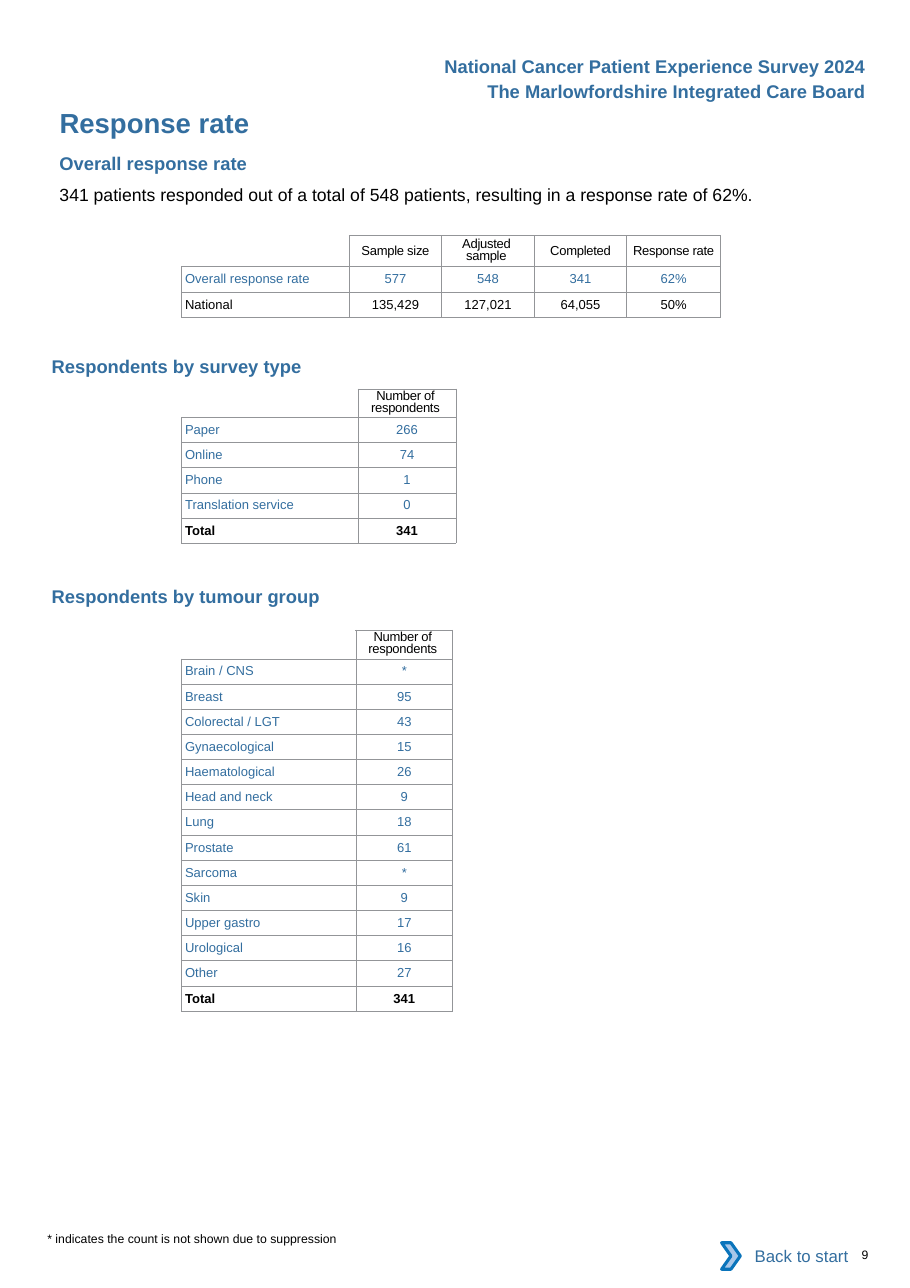
from lxml.etree import SubElement
from pptx import Presentation
from pptx.dml.color import RGBColor
from pptx.enum.shapes import MSO_SHAPE
from pptx.enum.text import MSO_ANCHOR, MSO_AUTO_SIZE, PP_ALIGN
from pptx.oxml.ns import qn
from pptx.util import Pt

PX = 9144  # 100 px to the inch
BLUE = RGBColor(0x33, 0x6E, 0x9F)
BLACK = RGBColor(0, 0, 0)
WHITE = RGBColor(255, 255, 255)
SKY = RGBColor(0xA8, 0xC7, 0xE9)
EDGE = RGBColor(0x0A, 0x74, 0xBB)
GREY = "939598"
LEFT, MID, RIGHT = PP_ALIGN.LEFT, PP_ALIGN.CENTER, PP_ALIGN.RIGHT

TITLE = ("Response rate", (54, 96, 413, 30), 18, BLUE, True, LEFT)

# text, box, size, colour, bold, alignment
TEXTS = [
    ("National Cancer Patient Experience Survey 2024", (386, 50, 400, 20), 12, BLUE, True, RIGHT),
    ("The Marlowfordshire Integrated Care Board", (386, 73, 400, 20), 12, BLUE, True, RIGHT),
    ("Overall response rate", (54, 138, 413, 20), 12, BLUE, True, LEFT),
    ("341 patients responded out of a total of 548 patients, "
     "resulting in a response rate of 62%.", (54, 167, 720, 19), 11.5, BLACK, False, LEFT),
    ("Respondents by survey type", (47, 322, 300, 20), 12, BLUE, True, LEFT),
    ("Respondents by tumour group", (47, 531, 300, 20), 12, BLUE, True, LEFT),
    ("* indicates the count is not shown due to suppression",
     (43, 1118, 300, 13), 8, BLACK, False, LEFT),
    ("9", (782, 1132, 30, 13), 8, BLACK, False, LEFT),
]

# top, height, head height, column widths, rows
TABLES = [
    (214, 74, 28, (152, 84, 84, 84, 85), [
        ("", "Sample size", "Adjusted sample", "Completed", "Response rate"),
        ("Overall response rate", "577", "548", "341", "62%"),
        ("National", "135,429", "127,021", "64,055", "50%"),
    ]),
    (353, 140, 26, (160, 89), [
        ("", "Number of respondents"),
        ("Paper", "266"),
        ("Online", "74"),
        ("Phone", "1"),
        ("Translation service", "0"),
        ("Total", "341"),
    ]),
    (572, 346, 26, (158, 88), [
        ("", "Number of respondents"),
        ("Brain / CNS", "*"),
        ("Breast", "95"),
        ("Colorectal / LGT", "43"),
        ("Gynaecological", "15"),
        ("Haematological", "26"),
        ("Head and neck", "9"),
        ("Lung", "18"),
        ("Prostate", "61"),
        ("Sarcoma", "*"),
        ("Skin", "9"),
        ("Upper gastro", "17"),
        ("Urological", "16"),
        ("Other", "27"),
        ("Total", "341"),
    ]),
]
TABLE_LEFT = 165
WRAP_LEN = 14  # longer heads run over two tight lines

LINK = ("Back to start", (662, 1119, 118, 42))
ARROW = (655, 1128, 17, 24)


def scale(box):
    return [n * PX for n in box]


def style(par, size, color, bold=False, align=LEFT):
    par.alignment = align
    for run in par.runs:
        font = run.font
        font.name, font.size, font.bold = "Arial", Pt(size), bold
        font.color.rgb = color


def write(shape, text, size, color, bold, align):
    """Fill a text shape that has no inner margins."""
    frame = shape.text_frame
    frame.margin_left = frame.margin_right = 0
    frame.margin_top = frame.margin_bottom = 0
    frame.word_wrap = True
    frame.auto_size = MSO_AUTO_SIZE.NONE
    frame.vertical_anchor = MSO_ANCHOR.TOP
    frame.text = text
    style(frame.paragraphs[0], size, color, bold, align)


def border(cell, corner):
    """Rule all four sides; a corner cell has only its right and bottom."""
    props = cell._tc.get_or_add_tcPr()
    for i, side in enumerate("LRTB"):
        line = SubElement(props, qn("a:ln" + side), w=str(Pt(0.5)))
        if corner and side in "LT":
            SubElement(line, qn("a:noFill"))
        else:
            fill = SubElement(line, qn("a:solidFill"))
            SubElement(fill, qn("a:srgbClr"), val=GREY)
        props.insert(i, line)


def set_cell(cell, text, r, c):
    corner = r == c == 0
    cell.margin_left = 3 * PX if c == 0 else 0
    cell.margin_right = cell.margin_top = cell.margin_bottom = 0
    cell.vertical_anchor = MSO_ANCHOR.MIDDLE
    cell.fill.background()
    border(cell, corner)
    par = cell.text_frame.paragraphs[0]
    if corner:
        SubElement(par._p, qn("a:endParaRPr"), sz="850")
        return
    par.text = text
    return par


def set_head(cell, par):
    par.runs[0]._r.get_or_add_rPr().set("spc", "-20")
    if len(par.text) > WRAP_LEN:
        par.line_spacing = Pt(7.6)
        cell.margin_left, cell.margin_right = scale((8, 11))


def add_grid(slide, top, height, head, widths, rows):
    box = scale((TABLE_LEFT, top, sum(widths), height))
    table = slide.shapes.add_table(len(rows), len(widths), *box).table
    table.first_row = table.horz_banding = False
    for col, width in zip(table.columns, widths):
        col.width = width * PX
    step = (height - head) * PX // (len(rows) - 1)
    for r, row in enumerate(rows):
        table.rows[r].height = step if r else head * PX
        total = row[0] == "Total"
        plain = r == 0 or row[0] in ("Total", "National")
        for c, text in enumerate(row):
            cell = table.cell(r, c)
            par = set_cell(cell, text, r, c)
            if par is None:
                continue
            style(par, 8.5, BLACK if plain else BLUE, total, MID if c else LEFT)
            if r == 0:
                set_head(cell, par)


def add_link(slide):
    text, box = LINK
    group = slide.shapes.add_group_shape()
    label = group.shapes.add_shape(MSO_SHAPE.RECTANGLE, *scale(box))
    arrow = group.shapes.add_shape(MSO_SHAPE.CHEVRON, *scale(ARROW))
    for shape, color in ((label, WHITE), (arrow, SKY)):
        shape.shadow.inherit = False
        shape.fill.solid()
        shape.fill.fore_color.rgb = color
    label.line.fill.background()
    arrow.line.color.rgb = EDGE
    arrow.line.width = Pt(2)
    frame = label.text_frame
    frame.text = text
    frame.vertical_anchor = MSO_ANCHOR.MIDDLE
    style(frame.paragraphs[0], 11, BLUE, align=RIGHT)


def main():
    deck = Presentation()
    deck.slide_width, deck.slide_height = scale((826, 1169))
    slide = deck.slides.add_slide(deck.slide_layouts[5])
    text, box, *look = TITLE
    title = slide.shapes.title
    title.left, title.top, title.width, title.height = scale(box)
    write(title, text, *look)
    for text, box, *look in TEXTS:
        write(slide.shapes.add_textbox(*scale(box)), text, *look)
    for grid in TABLES:
        add_grid(slide, *grid)
    add_link(slide)
    deck.save("out.pptx")


if __name__ == "__main__":
    main()
